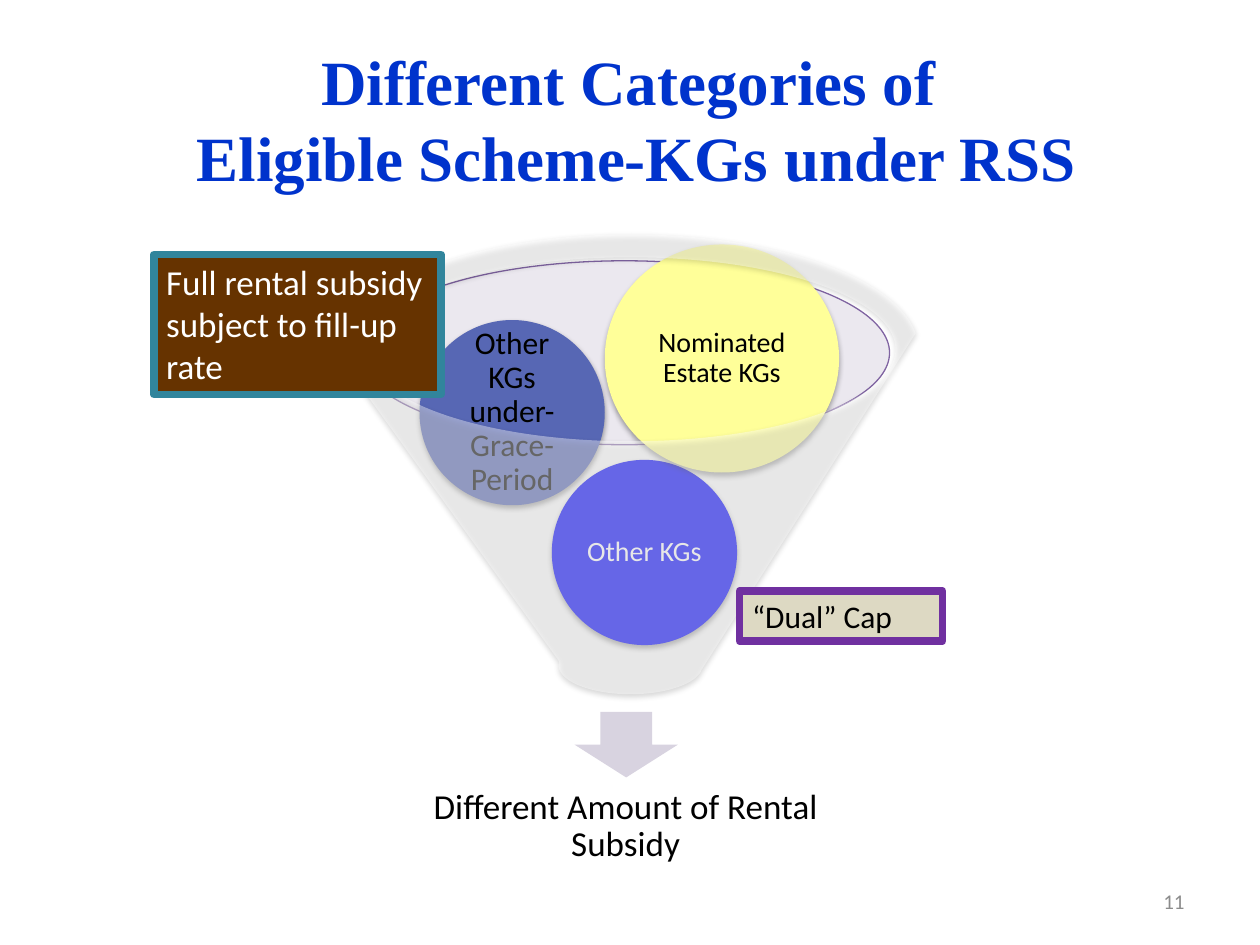
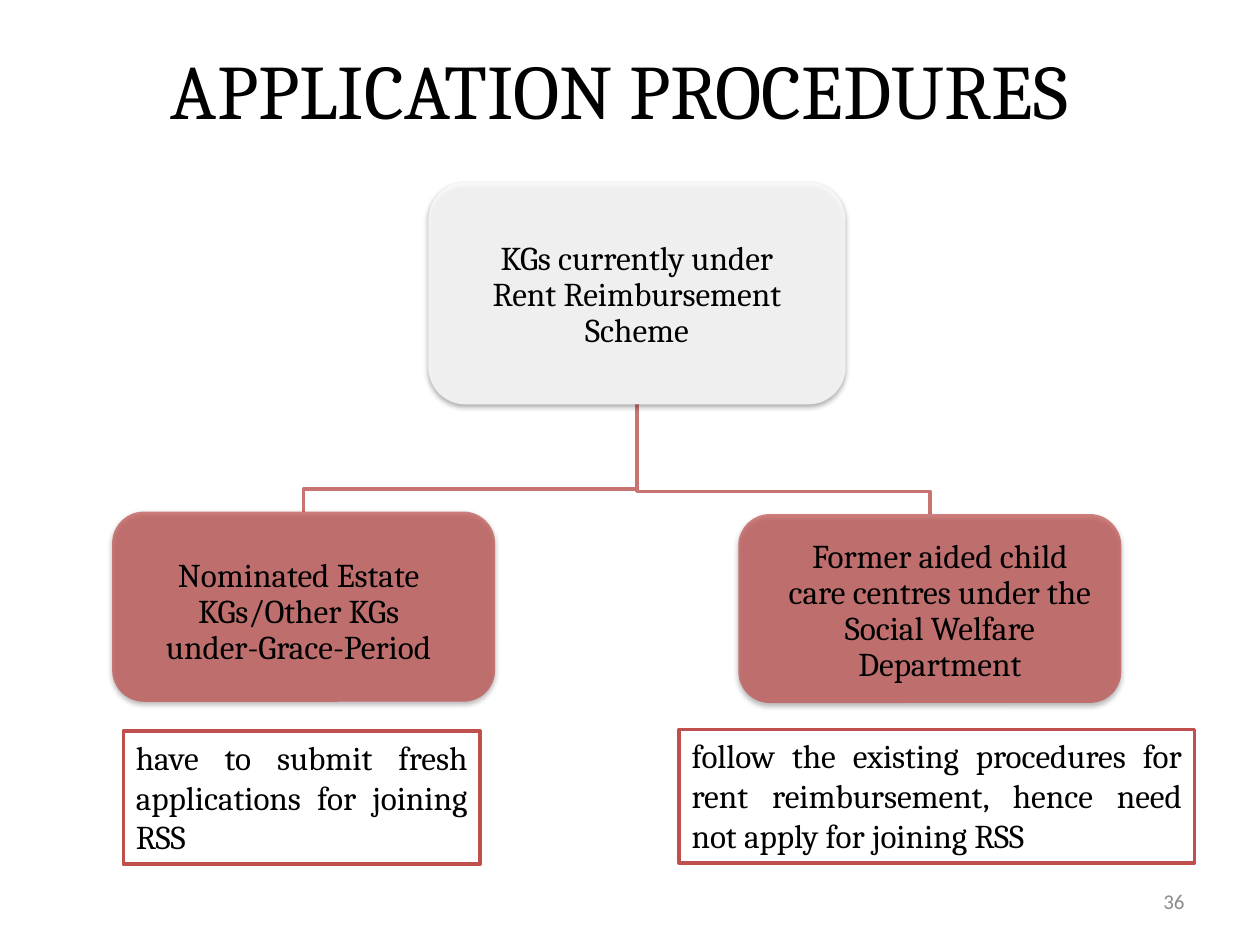
"""Build two slides on kindergarten rental subsidy categories and applications."""
from lxml import etree
from pptx import Presentation
from pptx import util as u
from pptx.dml.color import RGBColor
from pptx.enum import shapes, text
from pptx.oxml import ns

SANS, SERIF, TITLE_FONT = "Calibri", "Cambria", "Times New Roman"
BLACK, WHITE, GREY, TITLE_BLUE = "000000", "FFFFFF", "8C8C8C", "0033CC"
RED, LINK_RED = "C0504D", "C77472"
KIND = shapes.MSO_SHAPE
ALIGN = text.PP_ALIGN


def colour(value):
    """Turn a hex string into a colour."""
    return RGBColor.from_string(value)


def sub(parent, tag, **attributes):
    """Append a drawing element with the given attributes."""
    child = etree.SubElement(parent, ns.qn(tag))
    for name, value in attributes.items():
        child.set(name, str(value))
    return child


def add_shadow(shape, opacity, distance):
    """Give a shape a soft shadow falling straight down."""
    effects = shape.element.spPr.find(ns.qn("a:effectLst"))
    shadow = sub(effects, "a:outerShdw", blurRad=u.Pt(3.1), dist=u.Pt(distance),
                 dir=90 * 60000, algn="ctr", rotWithShape=0)
    tint = sub(shadow, "a:srgbClr", val=BLACK)
    sub(tint, "a:alpha", val=opacity * 1000)


def add_figure(page, kind, place, fill, line=None, width=1, opacity=100, shadow=None):
    """Add a preset shape; shadow is a pair of opacity and distance."""
    shape = page.shapes.add_shape(kind, *map(u.Inches, place))
    shape.shadow.inherit = False
    shape.fill.solid()
    shape.fill.fore_color.rgb = colour(fill)
    if opacity < 100:
        tint = shape.element.spPr.find(ns.qn("a:solidFill"))[0]
        sub(tint, "a:alpha", val=opacity * 1000)
    if line:
        shape.line.color.rgb = colour(line)
        shape.line.width = u.Pt(width)
    else:
        shape.line.fill.background()
    if shadow:
        add_shadow(shape, *shadow)
    return shape


def write(shape, words, size, font=SANS, ink=BLACK, align=ALIGN.CENTER,
          inset=None, spacing=None, middle=False, bold=False, wrap=True):
    """Put formatted text into a shape or text box."""
    frame = shape.text_frame
    frame.text = words
    frame.word_wrap = wrap
    frame.vertical_anchor = text.MSO_ANCHOR.MIDDLE if middle else text.MSO_ANCHOR.TOP
    if inset is not None:
        frame.margin_left = frame.margin_right = u.Inches(inset)
        frame.margin_top = frame.margin_bottom = u.Inches(inset)
    for para in frame.paragraphs:
        para.alignment = align
        if spacing:
            para.line_spacing = spacing
        for span in para.runs:
            span.font.name = font
            span.font.size = u.Pt(size)
            span.font.bold = bold
            span.font.color.rgb = colour(ink)


def add_text(page, place, words, size, **style):
    """Add a text box with formatted text."""
    box = page.shapes.add_textbox(*map(u.Inches, place))
    write(box, words, size, **style)


def add_page_number(page, number):
    """Add the page number at the lower right."""
    add_text(page, (7.17, 6.95, 2.33, 0.4), number, 12, ink=GREY,
             align=ALIGN.RIGHT, middle=True)


def add_category(page, place, words, size, fill, ink=BLACK):
    """Add a round category inside the funnel."""
    ball = add_figure(page, KIND.OVAL, place, fill, shadow=(35, 1.8))
    write(ball, words, size, ink=ink, inset=0.02, spacing=0.9, middle=True)


def add_note(page, place, words, size, fill, line, width, **style):
    """Add a framed rectangle with a remark."""
    note = add_figure(page, KIND.RECTANGLE, place, fill, line, width)
    write(note, words, size, **style)


def add_node(page, place, label_place, words, fill, opacity):
    """Add a rounded box of the hierarchy with its label."""
    add_figure(page, KIND.ROUNDED_RECTANGLE, place, fill, opacity=opacity,
               shadow=(38, 1.6))
    add_text(page, label_place, words, 19, font=SERIF, inset=0.08,
             spacing=0.9, middle=True)


def add_branch(page, parent, child):
    """Draw a bent line from the foot of the parent to the top of the child."""
    start_x, start_y = parent[0] + parent[2] / 2, parent[1] + parent[3]
    end_x, end_y = child[0] + child[2] / 2, child[1]
    bend_y = end_y - 0.18
    points = [(start_x, bend_y), (end_x, bend_y), (end_x, end_y)]
    builder = page.shapes.build_freeform(u.Inches(start_x), u.Inches(start_y))
    builder.add_line_segments([tuple(map(u.Inches, point)) for point in points], close=False)
    branch = builder.convert_to_shape()
    branch.shadow.inherit = False
    branch.fill.background()
    branch.line.color.rgb = colour(LINK_RED)
    branch.line.width = u.Pt(2)


def build_categories(page):
    """Show the categories falling through a funnel."""
    add_figure(page, KIND.OVAL, (2.85, 2.07, 4.21, 1.46), "CDC6D7",
               "8064A2", 0.75, opacity=40)
    add_figure(page, KIND.DOWN_ARROW, (4.56, 5.65, 0.82, 0.52), "D8D3E0")
    add_text(page, (3.27, 6.07, 3.39, 0.98), "Different Amount of Rental Subsidy", 20,
             inset=0.16, spacing=0.9, middle=True)
    add_category(page, (4.38, 3.65, 1.47, 1.47), "Other KGs", 16, "0000FF", WHITE)
    add_category(page, (3.33, 2.54, 1.47, 1.47), "Other KGs under-Grace-Period", 18, "5767B4")
    add_category(page, (4.8, 1.94, 1.86, 1.81), "Nominated Estate KGs", 16, "FFFF99")
    add_figure(page, KIND.FUNNEL, (2.72, 1.86, 4.57, 3.65), WHITE,
               opacity=40, shadow=(38, 1.6))
    add_page_number(page, "11")
    add_note(page, (1.22, 2.02, 2.28, 1.11), "Full rental subsidy subject to fill-up rate",
             20, "663300", "31859C", 4.33, ink=WHITE, align=ALIGN.LEFT)
    add_note(page, (5.87, 4.69, 1.61, 0.4), "“Dual” Cap",
             18, "DDD9C3", "7030A0", 4.33, align=ALIGN.LEFT)
    add_text(page, (1.29, 0.29, 7.52, 1.31),
             "Different Categories of \nEligible Scheme-KGs under RSS", 36,
             font=TITLE_FONT, ink=TITLE_BLUE, bold=True, wrap=False)


def build_procedures(page):
    """Show the application route of each kind of kindergarten."""
    scheme = (3.4, 1.45, 3.31, 1.76)
    nominated = (0.89, 4.06, 3.04, 1.51)
    aided = (5.86, 4.08, 3.04, 1.5)
    for child in (aided, nominated):
        add_branch(page, scheme, child)
    add_node(page, scheme, (3.71, 1.84, 2.69, 1.02),
             "KGs currently under Rent Reimbursement Scheme", WHITE, 80)
    add_node(page, nominated, (1.12, 4.19, 2.5, 1.34),
             "Nominated Estate KGs/Other KGs under-Grace-Period", RED, 70)
    add_node(page, aided, (6.13, 4.29, 2.66, 1.13),
             "Former aided child care centres under the Social Welfare Department", RED, 70)
    procedures = [
        ((0.98, 5.8, 2.83, 1.06), "have to submit fresh applications for joining RSS"),
        ((5.39, 5.79, 4.09, 1.06), "follow the existing procedures for rent "
                                   "reimbursement, hence need not apply for joining RSS"),
    ]
    for place, words in procedures:
        add_note(page, place, words, 19, WHITE, RED, 2, font=SERIF, align=ALIGN.JUSTIFY)
    add_text(page, (1.06, 0.29, 7.72, 0.84), "APPLICATION PROCEDURES", 44, font=SERIF)
    add_page_number(page, "36")


def main():
    """Build and save the deck."""
    deck = Presentation()
    deck.slide_width, deck.slide_height = u.Inches(10), u.Inches(7.5)
    for build in (build_categories, build_procedures):
        build(deck.slides.add_slide(deck.slide_layouts[6]))
    deck.save("out.pptx")


if __name__ == "__main__":
    main()
